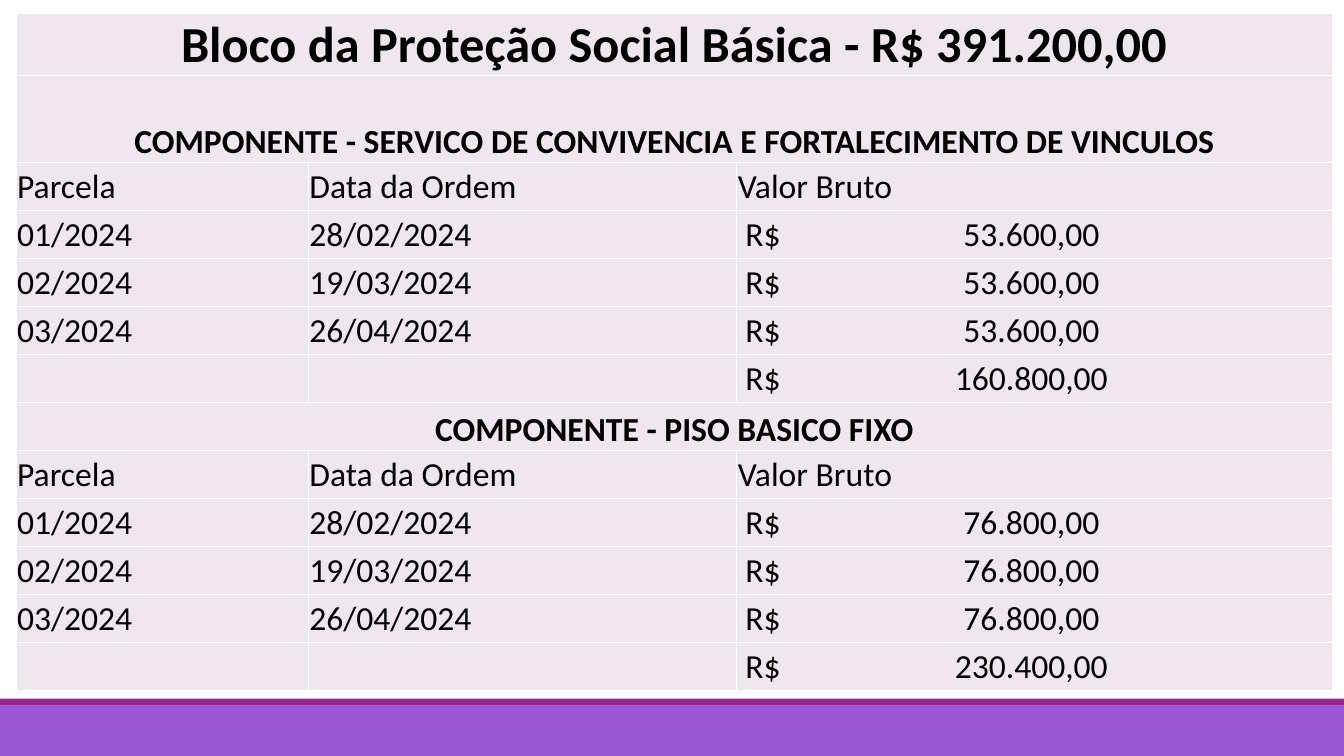
from dataclasses import dataclass

from lxml import etree
from pptx import Presentation
from pptx.dml.color import RGBColor
from pptx.enum.shapes import MSO_SHAPE
from pptx.enum.text import MSO_ANCHOR, PP_ALIGN
from pptx.oxml.ns import qn
from pptx.util import Pt

RECTANGLE = MSO_SHAPE.RECTANGLE
CENTER = PP_ALIGN.CENTER
BOTTOM, MIDDLE = MSO_ANCHOR.BOTTOM, MSO_ANCHOR.MIDDLE

COLORS = {"text": "000000", "cell": "EEE8EE", "border": "FFFFFF",
          "band": "9B57D3", "stripe": "92278F"}
FONT = "Calibri"
BODY_SIZE, TITLE_SIZE = 24, 36
SLIDE_WIDTH, SLIDE_HEIGHT = 960, 540
TABLE_LEFT, TABLE_TOP = 11.5, 9.4
COLUMN_WIDTHS = [208.8, 306, 425.5]
TITLE_HEIGHT, FIRST_HEADING_HEIGHT, ROW_HEIGHT = 43.2, 61.9, 34.3
CELL_INSET, AMOUNT_INSET, AMOUNT_TAB = 0.7, 6.2, 204.2

TITLE = "Bloco da Proteção Social Básica - R$ 391.200,00"
HEADERS = ["Parcela", "Data da Ordem", "Valor Bruto"]
INSTALLMENTS = [("01/2024", "28/02/2024"), ("02/2024", "19/03/2024"),
                ("03/2024", "26/04/2024")]


@dataclass
class Component:
    heading: str
    amount: str
    total: str


@dataclass
class FooterBand:
    top: float
    height: float
    color: str


COMPONENTS = [
    Component("COMPONENTE - SERVICO DE CONVIVENCIA E FORTALECIMENTO DE VINCULOS",
              "53.600,00", "160.800,00"),
    Component("COMPONENTE - PISO BASICO FIXO", "76.800,00", "230.400,00"),
]
FOOTER_BANDS = [FooterBand(504, 36, "band"), FooterBand(499, 5, "stripe")]


def rgb(name: str) -> RGBColor:
    return RGBColor.from_string(COLORS[name])


def draw_band(slide, band: FooterBand) -> None:
    bar = slide.shapes.add_shape(RECTANGLE, 0, Pt(band.top),
                                 Pt(SLIDE_WIDTH), Pt(band.height))
    bar.shadow.inherit = False
    bar.fill.solid()
    bar.fill.fore_color.rgb = rgb(band.color)
    bar.line.fill.background()


def style_cell(cell) -> None:
    cell.fill.solid()
    cell.fill.fore_color.rgb = rgb("cell")
    properties = cell._tc.get_or_add_tcPr()
    for position, side in enumerate(("lnL", "lnR", "lnT", "lnB")):
        border = etree.Element(qn(f"a:{side}"), w=str(Pt(1)))
        fill = etree.SubElement(border, qn("a:solidFill"))
        etree.SubElement(fill, qn("a:srgbClr"), val=COLORS["border"])
        properties.insert(position, border)


def write_cell(cell, text: str, size: float = BODY_SIZE, heading: bool = False) -> None:
    cell.margin_left = cell.margin_right = cell.margin_top = Pt(CELL_INSET)
    cell.margin_bottom = 0
    cell.vertical_anchor = BOTTOM if heading else MIDDLE
    paragraph = cell.text_frame.paragraphs[0]
    paragraph.text = text
    if heading:
        paragraph.alignment = CENTER
    paragraph.font.name = FONT
    paragraph.font.size = Pt(size)
    paragraph.font.bold = heading
    paragraph.font.color.rgb = rgb("text")


def write_amount(cell, amount: str) -> None:
    write_cell(cell, f"R$\t{amount}")
    cell.margin_left = Pt(AMOUNT_INSET)
    properties = cell.text_frame.paragraphs[0]._p.get_or_add_pPr()
    tabs = etree.Element(qn("a:tabLst"))
    etree.SubElement(tabs, qn("a:tab"), pos=str(Pt(AMOUNT_TAB)), algn="ctr")
    properties.find(qn("a:defRPr")).addprevious(tabs)


def write_heading(table, row: int, text: str, size: float = BODY_SIZE) -> None:
    table.cell(row, 0).merge(table.cell(row, len(HEADERS) - 1))
    write_cell(table.cell(row, 0), text, size, heading=True)


def write_component(table, top_row: int, component: Component) -> None:
    write_heading(table, top_row, component.heading)
    for column, header in enumerate(HEADERS):
        write_cell(table.cell(top_row + 1, column), header)
    for row, (installment, order_date) in enumerate(INSTALLMENTS, top_row + 2):
        write_cell(table.cell(row, 0), installment)
        write_cell(table.cell(row, 1), order_date)
        write_amount(table.cell(row, 2), component.amount)
    write_amount(table.cell(top_row + len(INSTALLMENTS) + 2, 2), component.total)


def draw_table(slide) -> None:
    component_rows = len(INSTALLMENTS) + 3
    row_count = 1 + component_rows * len(COMPONENTS)
    heights = [TITLE_HEIGHT, FIRST_HEADING_HEIGHT] + [ROW_HEIGHT] * (row_count - 2)
    table = slide.shapes.add_table(
        row_count, len(HEADERS), Pt(TABLE_LEFT), Pt(TABLE_TOP),
        Pt(sum(COLUMN_WIDTHS)), Pt(sum(heights))).table
    table.first_row = table.horz_banding = False
    for column, width in zip(table.columns, COLUMN_WIDTHS):
        column.width = Pt(width)
    for row, height in zip(table.rows, heights):
        row.height = Pt(height)
    for cell in table.iter_cells():
        style_cell(cell)

    write_heading(table, 0, TITLE, TITLE_SIZE)
    for index, component in enumerate(COMPONENTS):
        write_component(table, 1 + index * component_rows, component)


def main() -> None:
    presentation = Presentation()
    presentation.slide_width = Pt(SLIDE_WIDTH)
    presentation.slide_height = Pt(SLIDE_HEIGHT)
    slide = presentation.slides.add_slide(presentation.slide_layouts[6])

    # Footer bands
    for band in FOOTER_BANDS:
        draw_band(slide, band)

    # Payments by component
    draw_table(slide)

    presentation.save("out.pptx")


if __name__ == "__main__":
    main()
